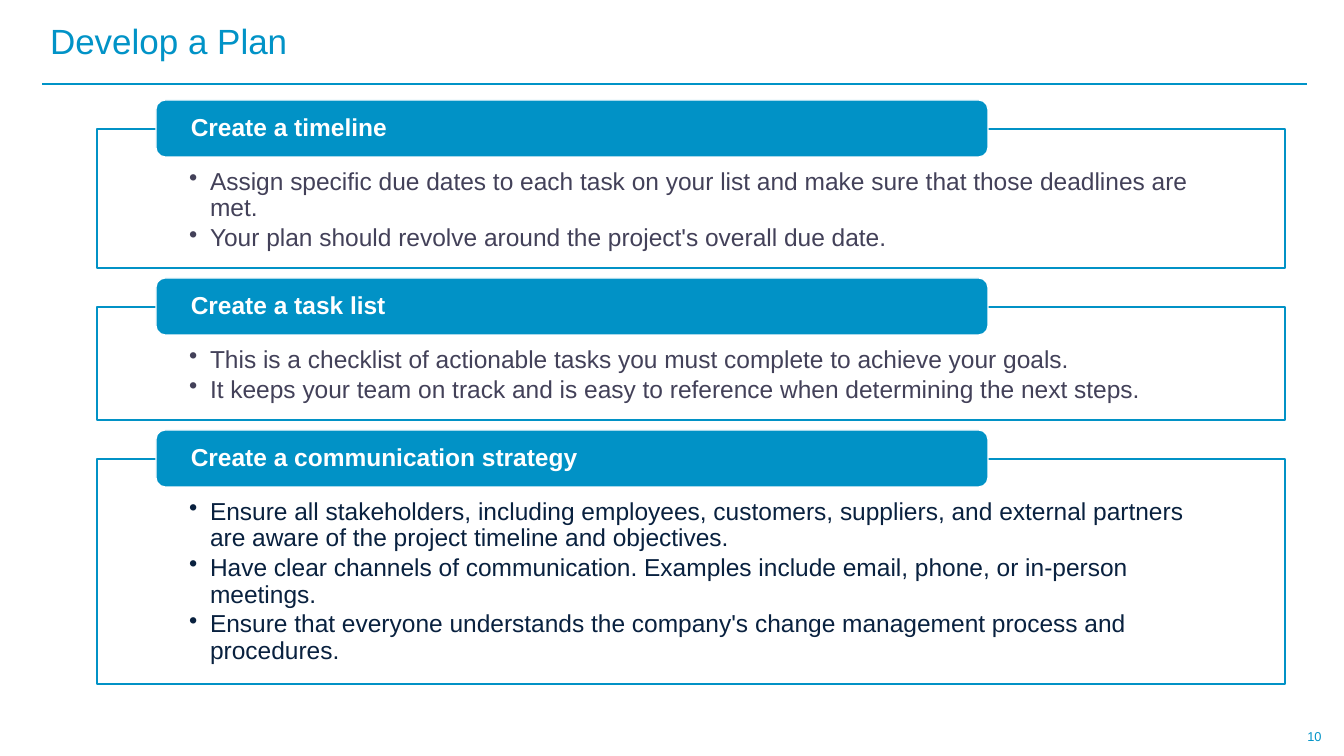
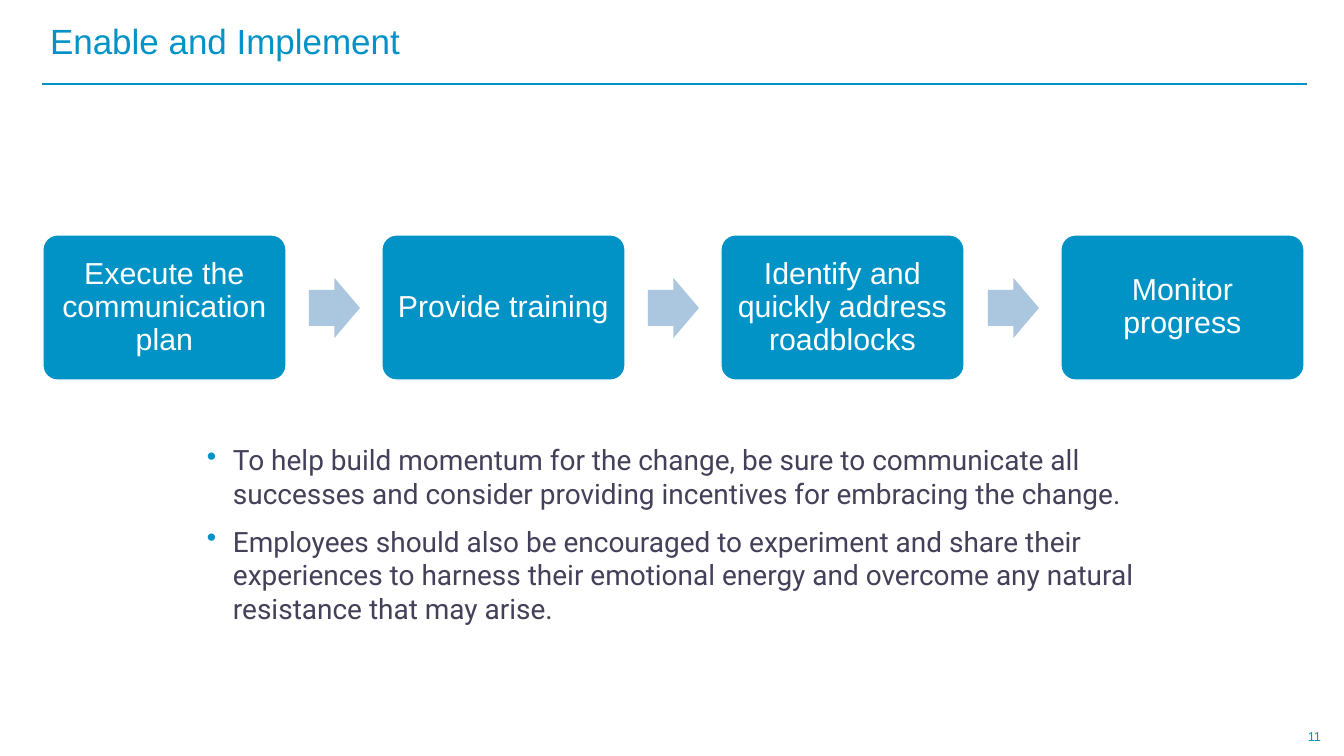
from lxml.etree import SubElement
from pptx import Presentation
from pptx.dml.color import RGBColor
from pptx.enum.shapes import MSO_CONNECTOR, MSO_SHAPE as Shape
from pptx.enum.text import MSO_ANCHOR as Anchor, PP_ALIGN as Align
from pptx.oxml.ns import qn
from pptx.util import Pt

EMU_PER_PX = 914400 / 84
COLORS = {
    "title": "0193C7",
    "rule": "0093C7",
    "blue": "0192C6",
    "arrow": "ABC7DF",
    "text": "434159",
    "navy": "09213F",
    "white": "FFFFFF",
}


def px(length):
    return round(length * EMU_PER_PX)


def color(name):
    return RGBColor.from_string(COLORS[name])


class Deck:
    def __init__(self):
        self.presentation = Presentation()
        self.presentation.slide_width = px(1344)
        self.presentation.slide_height = px(756)
        self.slide = None

    def add_slide(self, title, number):
        """Start a slide with the shared rule, page number and title."""
        layout = self.presentation.slide_layouts[6]
        self.slide = self.presentation.slides.add_slide(layout)
        self.rule(42, 1307, 84)
        self.text_box((1285, 716, 59, 40), [str(number)], size=11,
                      font_color="title", align=Align.CENTER, anchor=Anchor.MIDDLE)
        self.text_box((42, 20, 1027, 47), [title], size=30, font_color="title",
                      anchor=Anchor.MIDDLE, line_spacing=0.9)

    def rule(self, left, right, top):
        line = self.slide.shapes.add_connector(
            MSO_CONNECTOR.STRAIGHT, px(left), px(top), px(right), px(top))
        line.line.color.rgb = color("rule")
        line.line.width = Pt(1.5)
        SubElement(line._element.spPr, qn("a:effectLst"))

    def box(self, kind, area, fill, line=None, adjustments=()):
        shape = self.slide.shapes.add_shape(kind, *map(px, area))
        shape.shadow.inherit = False
        shape.fill.solid()
        shape.fill.fore_color.rgb = color(fill)
        if line:
            shape.line.color.rgb = color(line)
            shape.line.width = Pt(1)
        else:
            shape.line.fill.background()
        for index, value in enumerate(adjustments):
            shape.adjustments[index] = value
        return shape

    def text_box(self, area, texts, **style):
        shape = self.slide.shapes.add_textbox(*map(px, area))
        self.set_text(shape, texts, **style)

    def set_text(self, shape, texts, size, font_color, font="Arial", bold=False,
                 align=Align.LEFT, anchor=Anchor.TOP, insets=(8, 4, 8, 4),
                 line_spacing=1.0, gap=0, bullet=None, bullet_color=None):
        """Fill a shape; bullet is (text margin, hanging indent) in px."""
        frame = shape.text_frame
        frame.word_wrap = True
        frame.vertical_anchor = anchor
        (frame.margin_left, frame.margin_top,
         frame.margin_right, frame.margin_bottom) = map(px, insets)
        for index, text in enumerate(texts):
            paragraph = frame.add_paragraph() if index else frame.paragraphs[0]
            paragraph.text = text
            paragraph.alignment = align
            paragraph.line_spacing = line_spacing
            if index:
                paragraph.space_before = Pt(gap)
            if bullet:
                self.add_bullet(paragraph, bullet, bullet_color or font_color)
            paragraph.font.name = font
            paragraph.font.size = Pt(size)
            paragraph.font.bold = bold
            paragraph.font.color.rgb = color(font_color)

    def add_bullet(self, paragraph, bullet, bullet_color):
        margin, hanging = bullet
        properties = paragraph._p.get_or_add_pPr()
        properties.set("marL", str(px(margin)))
        properties.set("indent", str(-px(hanging)))
        fill = SubElement(properties, qn("a:buClr"))
        SubElement(fill, qn("a:srgbClr"), val=COLORS[bullet_color])
        SubElement(properties, qn("a:buChar"), char="•")

    def panel(self, top, height, heading, points, font_color):
        """Outlined panel of bullets with a heading tab over its top edge."""
        panel = self.box(Shape.RECTANGLE, (97, top, 1188, height), "white", "blue")
        self.set_text(panel, points, size=21, font_color=font_color, line_spacing=0.9,
                      gap=3, insets=(92, 40, 92, 13), bullet=(21, 21))
        tab = self.box(Shape.ROUNDED_RECTANGLE, (156, top - 29, 832, 57),
                       "blue", "white")
        self.set_text(tab, [heading], size=21, font_color="white", bold=True,
                      anchor=Anchor.MIDDLE, line_spacing=0.9, insets=(32, 0, 32, 0))

    def process(self, steps):
        """Row of equally spaced steps with an arrow in each gap."""
        for index, step in enumerate(steps):
            left = 43 + index * 1018 // 3
            if index:
                self.box(Shape.RIGHT_ARROW, (left - 73, 278, 51, 60), "arrow",
                         adjustments=(0.6, 0.5))
            box = self.box(Shape.ROUNDED_RECTANGLE, (left, 235, 243, 145),
                           "blue", "white", adjustments=(0.1,))
            self.set_text(box, [step], size=26, font_color="white", align=Align.CENTER,
                          anchor=Anchor.MIDDLE, line_spacing=0.9, insets=(9, 9, 9, 9))


def main():
    deck = Deck()

    # Plan: three headed panels
    deck.add_slide("Develop a Plan", 10)
    deck.panel(129, 139, "Create a timeline", [
        "Assign specific due dates to each task on your list and make sure that "
        "those deadlines are met.",
        "Your plan should revolve around the project's overall due date.",
    ], "text")
    deck.panel(307, 113, "Create a task list", [
        "This is a checklist of actionable tasks you must complete to achieve "
        "your goals.",
        "It keeps your team on track and is easy to reference when determining "
        "the next steps.",
    ], "text")
    deck.panel(459, 225, "Create a communication strategy", [
        "Ensure all stakeholders, including employees, customers, suppliers, and "
        "external partners are aware of the project timeline and objectives.",
        "Have clear channels of communication. Examples include email, phone, or "
        "in-person meetings.",
        "Ensure that everyone understands the company's change management process "
        "and procedures.",
    ], "navy")

    # Implementation: process row and advice
    deck.add_slide("Enable and Implement", 11)
    deck.process([
        "Execute the communication plan",
        "Provide training",
        "Identify and quickly address roadblocks",
        "Monitor progress",
    ])
    deck.text_box((186, 439, 1030, 192), [
        "To help build momentum for the change, be sure to communicate all "
        "successes and consider providing incentives for embracing the change.",
        "Employees should also be encouraged to experiment and share their "
        "experiences to harness their emotional energy and overcome any natural "
        "resistance that may arise.",
    ], size=24, font_color="text", font="Roboto", gap=12, bullet=(39, 26),
        bullet_color="blue")

    deck.presentation.save("out.pptx")


if __name__ == "__main__":
    main()
